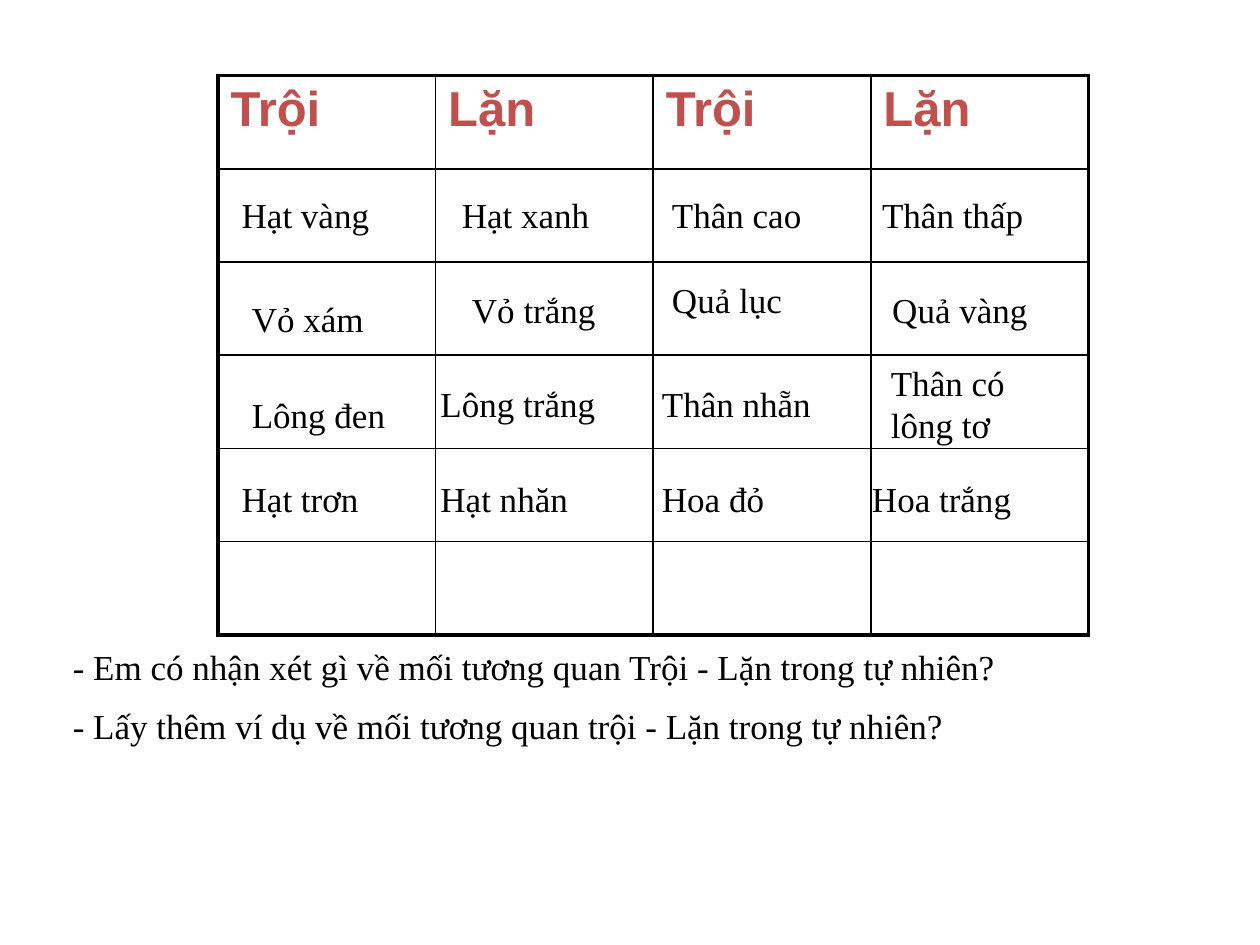
from pptx import Presentation
from pptx.dml.color import RGBColor
from pptx.enum.text import MSO_AUTO_SIZE as AutoSize
from pptx.oxml.xmlchemy import OxmlElement as Element
from pptx.util import Inches, Pt

BLACK = RGBColor(0x00, 0x00, 0x00)
RED = RGBColor(0xC0, 0x50, 0x4D)

LEFT, TOP, WIDTH, HEIGHT = 1.73, 0.6, 6.91, 4.44
COLS, ROWS = 4, 6
COL_W, ROW_H = WIDTH / COLS, HEIGHT / ROWS
THIN, THICK = 1, 2.25

HEADERS = ["Trội", "Lặn", "Trội", "Lặn"]
TRAITS = [
    [("Hạt vàng", 0.09, 0.15, 1.47), ("Hạt xanh", 0.11, 0.15, 1.47),
     ("Thân cao", 0.05, 0.15, 1.47), ("Thân thấp", -0.01, 0.15, 1.47)],
    [("Vỏ xám", 0.17, 0.23, 1.3), ("Vỏ trắng", 0.19, 0.16, 1.3),
     ("Quả lục", 0.05, 0.08, 1.3), ("Quả vàng", 0.07, 0.16, 1.55)],
    [("Lông đen", 0.17, 0.25, 1.47), ("Lông trắng", -0.06, 0.17, 1.64),
     ("Thân nhẵn", -0.03, 0.17, 1.64), ("Thân có lông tơ", 0.06, 0, 1.64)],
    [("Hạt trơn", 0.09, 0.18, 1.64), ("Hạt nhăn", -0.06, 0.18, 1.64),
     ("Hoa đỏ", -0.03, 0.18, 1.64), ("Hoa trắng", -0.09, 0.18, 1.64)],
]
QUESTIONS = [
    "- Em có nhận xét gì về mối tương quan Trội - Lặn trong tự nhiên?",
    "- Lấy thêm ví dụ về mối tương quan trội - Lặn trong tự nhiên?",
]


def add_run(p, text, font, size, color, bold=False):
    r = p.add_run()
    r.text = text
    r.font.name = font
    r.font.size = Pt(size)
    r.font.color.rgb = color
    r.font.bold = bold


def add_text(s, lines, left, top, width, height=0.44):
    tf = s.shapes.add_textbox(*map(Inches, (left, top, width, height))).text_frame
    tf.word_wrap = True
    tf.auto_size = AutoSize.SHAPE_TO_FIT_TEXT
    for i, line in enumerate(lines):
        p = tf.add_paragraph() if i else tf.paragraphs[0]
        if i:
            p.space_before = Pt(10)
        add_run(p, line, "Times New Roman", 20, BLACK)


def set_borders(cell, widths):
    tc_pr = cell._tc.get_or_add_tcPr()
    for i, (side, width) in enumerate(widths.items()):
        ln = Element(f"a:ln{side}")
        ln.set("w", str(Pt(width)))
        fill = Element("a:solidFill")
        color = Element("a:srgbClr")
        color.set("val", str(BLACK))
        fill.append(color)
        ln.append(fill)
        tc_pr.insert(i, ln)


def add_trait_table(s):
    table = s.shapes.add_table(
        ROWS, COLS, *map(Inches, (LEFT, TOP, WIDTH, HEIGHT))).table
    table.first_row = table.horz_banding = False
    for column in table.columns:
        column.width = Inches(COL_W)
    for row in table.rows:
        row.height = Inches(ROW_H)
    for r in range(ROWS):
        for c in range(COLS):
            cell = table.cell(r, c)
            cell.fill.background()
            set_borders(cell, {
                "L": THICK if c == 0 else THIN,
                "R": THICK if c == COLS - 1 else THIN,
                "T": THICK if r == 0 else THIN,
                "B": THICK if r == ROWS - 1 else THIN,
            })
    for c, header in enumerate(HEADERS):
        p = table.cell(0, c).text_frame.paragraphs[0]
        add_run(p, header, "Arial", 28, RED, bold=True)


def add_traits(s):
    for r, row in enumerate(TRAITS, start=1):
        for c, (text, dx, dy, width) in enumerate(row):
            add_text(s, [text], LEFT + c * COL_W + dx, TOP + r * ROW_H + dy, width)


def main():
    prs = Presentation()
    prs.slide_width, prs.slide_height = Inches(10), Inches(7.5)
    s = prs.slides.add_slide(prs.slide_layouts[6])
    add_trait_table(s)
    add_text(s, QUESTIONS, 0.48, 5.07, 9.5, 0.94)
    add_traits(s)
    prs.save("out.pptx")


if __name__ == "__main__":
    main()
